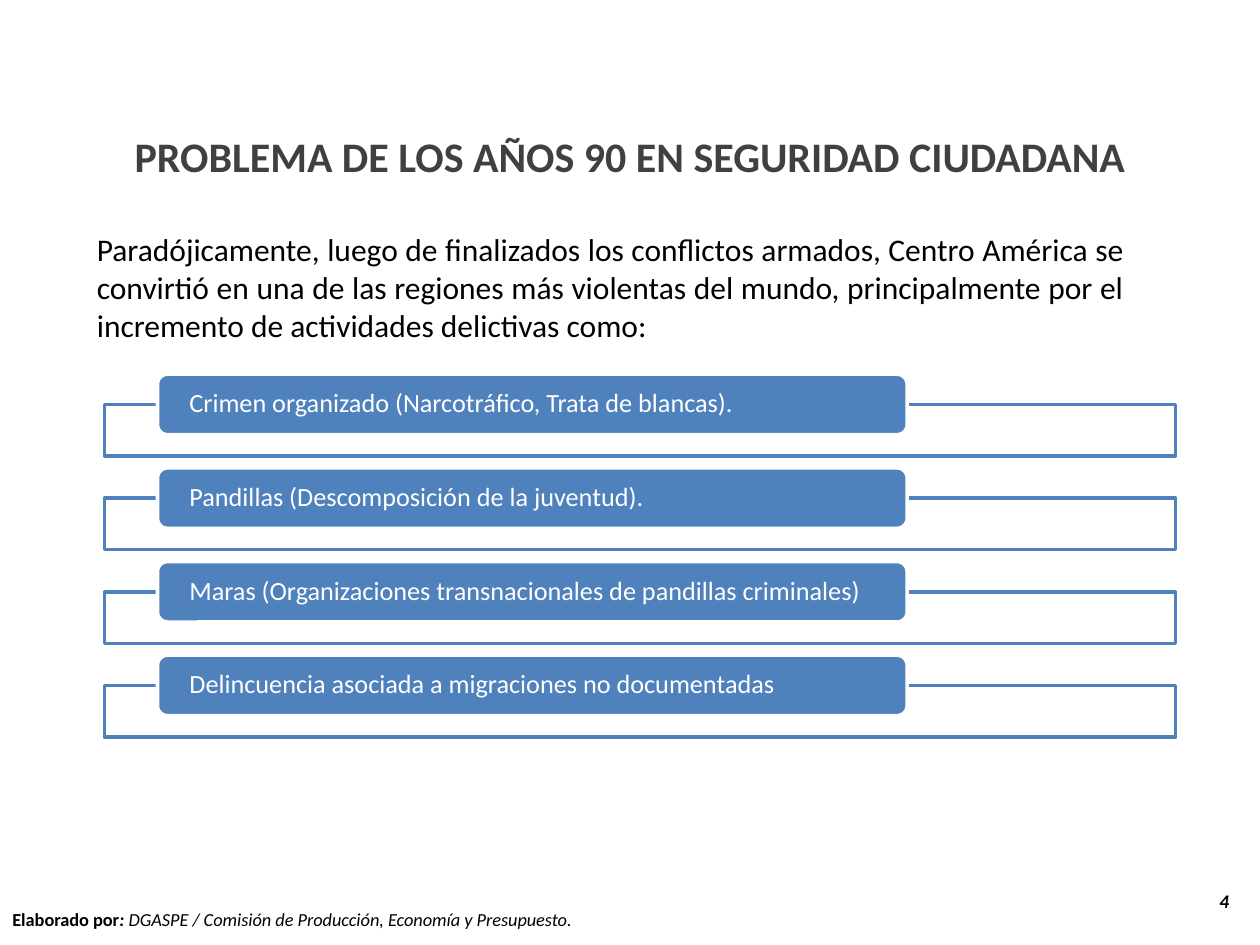
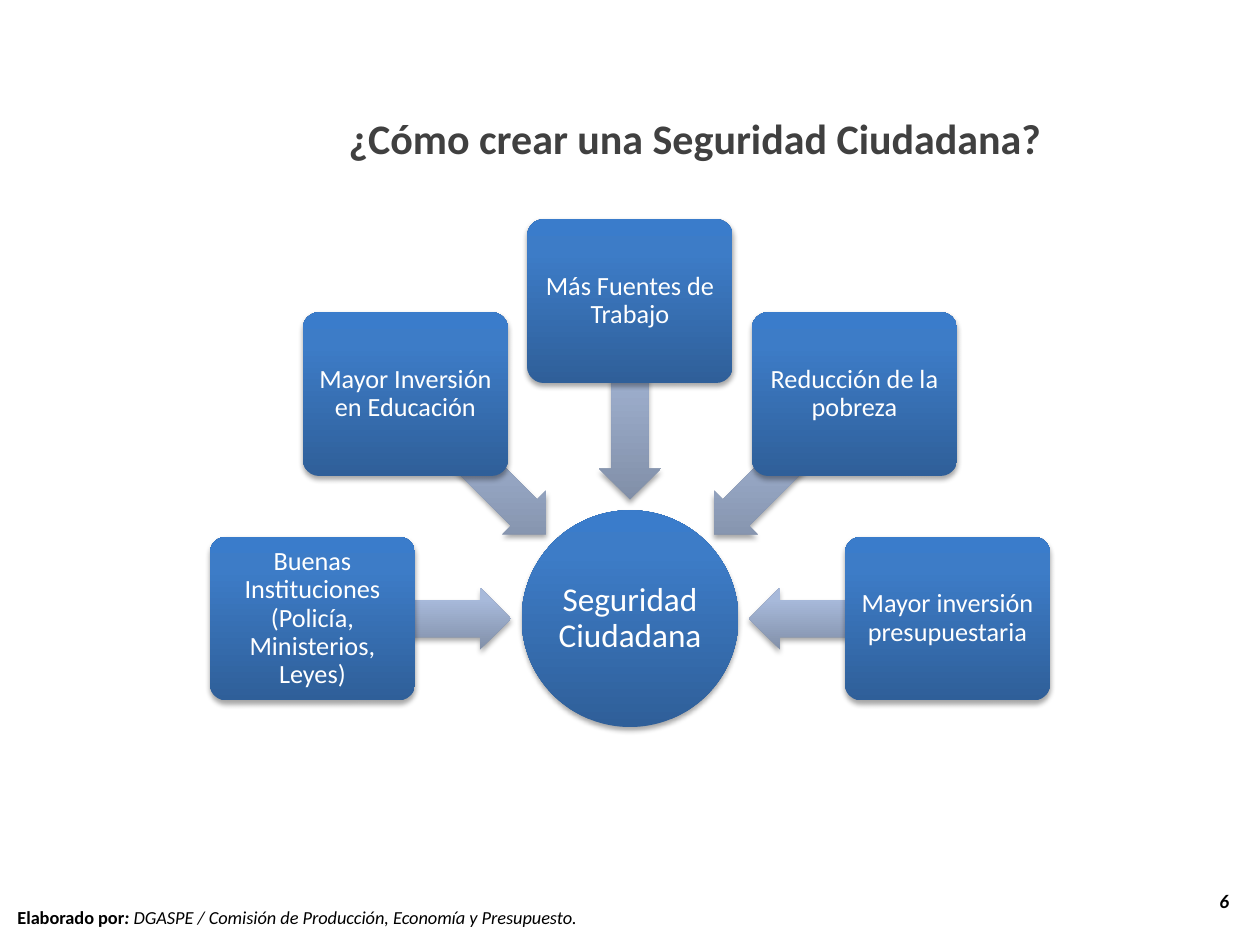
from math import cos, radians, sin

from lxml import etree
from pptx import Presentation
from pptx.dml.color import RGBColor
from pptx.enum.shapes import MSO_SHAPE
from pptx.enum.text import MSO_ANCHOR, PP_ALIGN
from pptx.oxml import parse_xml
from pptx.oxml.ns import nsdecls, qn
from pptx.util import Inches, Pt

WHITE = RGBColor(0xFF, 0xFF, 0xFF)
BLACK = RGBColor(0, 0, 0)
GRAY = RGBColor(0x40, 0x40, 0x40)
BLUE = RGBColor(0x4F, 0x81, 0xBD)
BOX_STOPS = [(0, RGBColor(0x2F, 0x5F, 0x99)), (80, RGBColor(0x3D, 0x7C, 0xC7)),
             (100, RGBColor(0x3A, 0x7C, 0xCB))]
ARROW_STOPS = [(0, RGBColor(0x81, 0x8F, 0xA8)), (80, RGBColor(0xA7, 0xB9, 0xDA)),
               (100, RGBColor(0xA7, 0xBA, 0xDC))]


class Deck:
    font = "Calibri"

    def __init__(self):
        self.prs = Presentation()
        self.prs.slide_width = Inches(10)
        self.prs.slide_height = Inches(7.5)
        self.s = None

    def slide(self):
        self.s = self.prs.slides.add_slide(self.prs.slide_layouts[6])

    def style(self, p, size, color, bold=None, italic=None, align=PP_ALIGN.LEFT):
        p.alignment = align
        f = p.font
        f.name, f.size, f.bold, f.italic = self.font, Pt(size), bold, italic
        f.color.rgb = color

    def text(self, x, y, w, h, text, size, color=BLACK, wrap=True, **style):
        tf = self.s.shapes.add_textbox(Inches(x), Inches(y), Inches(w), Inches(h)).text_frame
        tf.word_wrap = wrap
        p = tf.paragraphs[0]
        p.text = text
        self.style(p, size, color, **style)
        return p

    def title(self, x, y, w, text, wrap=True):
        self.text(x, y, w, 0.5, text, 24, GRAY, wrap, bold=True, align=PP_ALIGN.CENTER)

    def footer(self, x, y, number):
        p = self.text(x, y, 4.73, 0.28, "", 10.5, wrap=False)
        for text, bold, italic in (
            ("Elaborado por", True, False),
            (": ", True, True),
            ("DGASPE / Comisión de Producción, Economía y Presupuesto.", False, True),
        ):
            r = p.add_run()
            r.text = text
            r.font.bold, r.font.italic = bold, italic
        self.text(9.58, 7.01, 0.28, 0.29, number, 11, wrap=False, bold=True, italic=True)

    def shape(self, kind, x, y, w, h, adjustments=()):
        sp = self.s.shapes.add_shape(kind, Inches(x), Inches(y), Inches(w), Inches(h))
        sp.shadow.inherit = False
        for i, value in enumerate(adjustments):
            sp.adjustments[i] = value
        return sp

    def flat(self, kind, x, y, w, h, fill, line, alpha=None):
        sp = self.shape(kind, x, y, w, h)
        sp.fill.solid()
        sp.fill.fore_color.rgb = fill
        sp.line.color.rgb = line
        sp.line.width = Pt(2)
        if alpha:
            clr = sp.fill._xPr.find(qn("a:solidFill"))[0]
            etree.SubElement(clr, qn("a:alpha")).set("val", str(alpha * 1000))
        return sp

    def glossy(self, kind, cx, cy, w, h, stops, adjustments=()):
        sp = self.shape(kind, cx - w / 2, cy - h / 2, w, h, adjustments)
        sp.line.fill.background()
        gs = "".join(f'<a:gs pos="{pos * 1000}"><a:srgbClr val="{color}"/></a:gs>'
                     for pos, color in stops)
        sp_pr = sp._element.spPr
        sp_pr.find(qn("a:ln")).addprevious(parse_xml(
            f'<a:gradFill {nsdecls("a")} rotWithShape="0"><a:gsLst>{gs}</a:gsLst>'
            '<a:lin ang="16200000" scaled="0"/></a:gradFill>'))
        sp_pr.find(qn("a:effectLst")).append(parse_xml(
            f'<a:outerShdw {nsdecls("a")} blurRad="{Pt(3.1)}" dist="{Pt(1.8)}" dir="5400000"'
            ' rotWithShape="0"><a:srgbClr val="000000"><a:alpha val="35000"/></a:srgbClr>'
            '</a:outerShdw>'))
        return sp

    def label(self, sp, text, size, inset_x, inset_y, align=PP_ALIGN.CENTER):
        tf = sp.text_frame
        tf.word_wrap = True
        tf.vertical_anchor = MSO_ANCHOR.MIDDLE
        tf.margin_left = tf.margin_right = Inches(inset_x)
        tf.margin_top = tf.margin_bottom = Inches(inset_y)
        p = tf.paragraphs[0]
        p.text = text
        p.line_spacing = 0.9
        self.style(p, size, WHITE, align=align)


def problem_slide(d):
    d.slide()
    d.text(0.67, 1.78, 8.35, 1.01,
           "Paradójicamente, luego de finalizados los conflictos armados, Centro América se "
           "convirtió en una de las regiones más violentas del mundo, principalmente por el "
           "incremento de actividades delictivas como:", 18, align=PP_ALIGN.JUSTIFY)
    d.title(0.67, 0.99, 8.66, "PROBLEMA DE LOS AÑOS 90 EN SEGURIDAD CIUDADANA")
    crimes = (
        "Crimen organizado (Narcotráfico, Trata de blancas).",
        "Pandillas (Descomposición de la juventud).",
        "Maras (Organizaciones transnacionales de pandillas criminales)",
        "Delincuencia asociada a migraciones no documentadas",
    )
    pitch, tab_h = 2.23 / 3, 0.48
    for i, crime in enumerate(crimes):
        y = 3.21 + i * pitch
        d.flat(MSO_SHAPE.RECTANGLE, 0.83, y, 8.5, 0.41, WHITE, BLUE, alpha=90)
        tab = d.flat(MSO_SHAPE.ROUNDED_RECTANGLE, 1.25, y - tab_h / 2, 5.95, tab_h, BLUE, WHITE)
        d.label(tab, crime, 15, 0.23, 0, PP_ALIGN.LEFT)
    d.footer(0, 7.16, "4")


def solution_slide(d):
    d.slide()
    cx, cy = 5, 4.91
    hub = d.glossy(MSO_SHAPE.OVAL, cx, cy, 1.72, 1.72, BOX_STOPS)
    d.label(hub, "Seguridad Ciudadana", 19, 0.01, 0.01)
    factors = (
        "Buenas Instituciones (Policía, Ministerios, Leyes)",
        "Mayor Inversión en Educación",
        "Más Fuentes de Trabajo",
        "Reducción de la pobreza",
        "Mayor inversión presupuestaria",
    )
    for i, factor in enumerate(factors):
        angle = (180 + 45 * i) % 360
        dx, dy = cos(radians(angle)), sin(radians(angle))
        arrow = d.glossy(MSO_SHAPE.LEFT_ARROW, cx + 1.73 * dx, cy + 1.73 * dy, 1.57, 0.49,
                         ARROW_STOPS, (0.6, 0.5))
        arrow.rotation = angle
        box = d.glossy(MSO_SHAPE.ROUNDED_RECTANGLE, cx + 2.52 * dx, cy + 2.52 * dy, 1.63, 1.3,
                       BOX_STOPS, (0.1,))
        d.label(box, factor, 15, 0.03, 0.03)
    d.title(2.64, 0.84, 5.75, "¿Cómo crear una Seguridad Ciudadana?", wrap=False)
    d.footer(0.04, 7.14, "6")


def main():
    d = Deck()
    problem_slide(d)
    solution_slide(d)
    d.prs.save("out.pptx")


if __name__ == "__main__":
    main()
